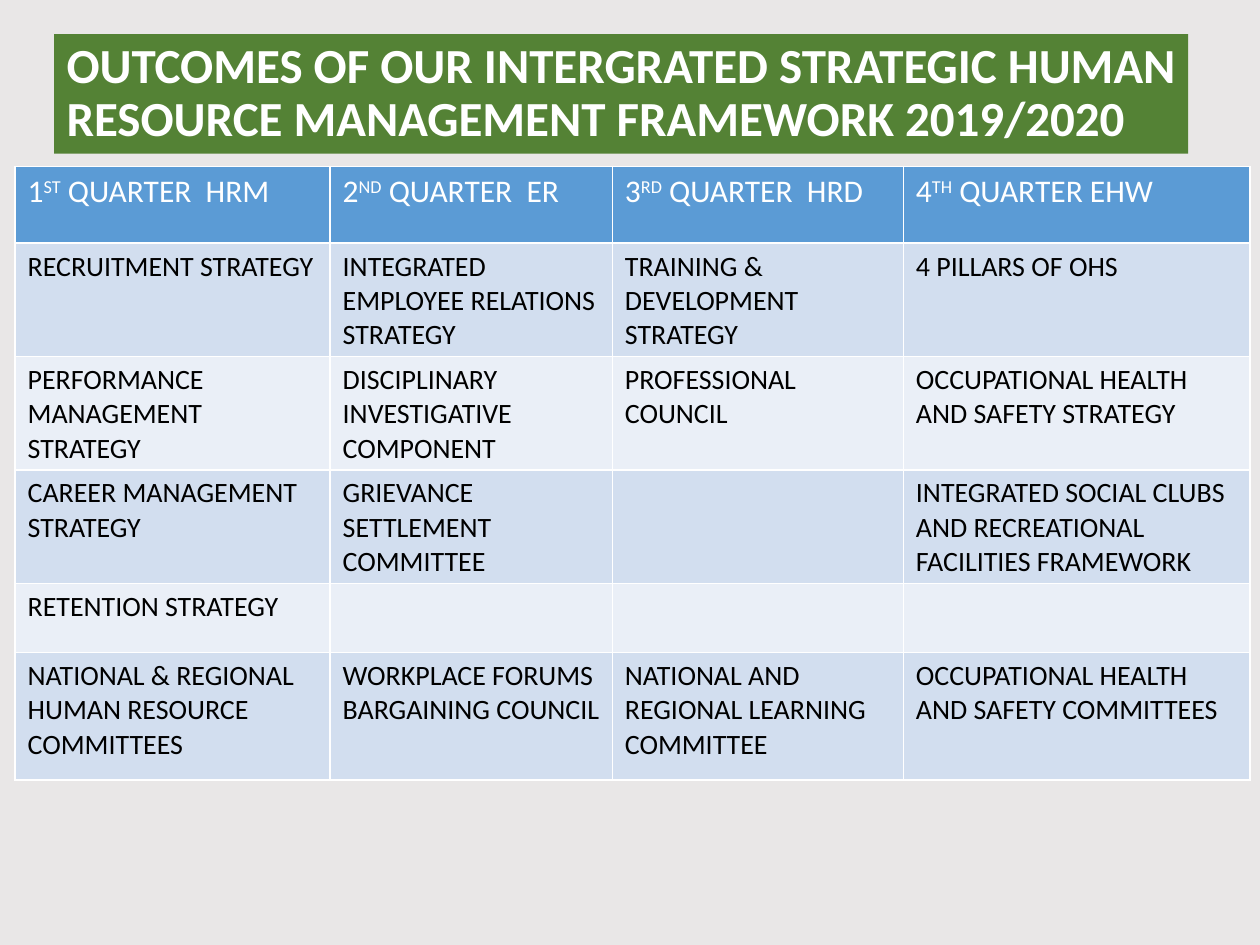
from pptx import Presentation
from pptx.dml.color import RGBColor
from pptx.enum import text
from pptx.util import Inches, Pt

FONT = "Calibri"
WHITE = RGBColor(0xFF, 0xFF, 0xFF)
BLACK = RGBColor(0, 0, 0)
GRAY = RGBColor(0xE9, 0xE7, 0xE7)
GREEN = RGBColor(0x54, 0x82, 0x35)
BLUE = RGBColor(0x5B, 0x9B, 0xD5)
BANDS = (RGBColor(0xD2, 0xDE, 0xEF), RGBColor(0xEA, 0xEF, 0xF7))

TITLE = "OUTCOMES OF OUR INTERGRATED STRATEGIC HUMAN RESOURCE MANAGEMENT FRAMEWORK 2019/2020"
WIDTHS = (2.5, 2.24, 2.31, 2.75)
HEIGHTS = (0.61, 0.84, 0.84, 0.84, 0.55, 1.01)
HEADS = (
    ("1", "ST", " QUARTER  HRM"),
    ("2", "ND", " QUARTER  ER"),
    ("3", "RD", " QUARTER  HRD"),
    ("4", "TH", " QUARTER EHW"),
)
ROWS = (
    ("RECRUITMENT STRATEGY", "INTEGRATED EMPLOYEE RELATIONS STRATEGY",
     "TRAINING & DEVELOPMENT STRATEGY", "4 PILLARS OF OHS"),
    ("PERFORMANCE MANAGEMENT STRATEGY", "DISCIPLINARY INVESTIGATIVE COMPONENT",
     "PROFESSIONAL COUNCIL", "OCCUPATIONAL HEALTH AND SAFETY STRATEGY"),
    ("CAREER MANAGEMENT STRATEGY", "GRIEVANCE SETTLEMENT COMMITTEE",
     "", "INTEGRATED SOCIAL CLUBS AND RECREATIONAL FACILITIES FRAMEWORK"),
    ("RETENTION STRATEGY", "", "", ""),
    ("NATIONAL & REGIONAL HUMAN RESOURCE COMMITTEES",
     "WORKPLACE FORUMS\nBARGAINING COUNCIL",
     "NATIONAL AND REGIONAL LEARNING COMMITTEE",
     "OCCUPATIONAL HEALTH AND SAFETY COMMITTEES"),
)


def paint(item, color):
    item.fill.solid()
    item.fill.fore_color.rgb = color


def style(frame, size, color, bold=False):
    for para in frame.paragraphs:
        for run in para.runs:
            font = run.font
            font.name, font.size, font.bold = FONT, Pt(size), bold
            font.color.rgb = color


def add_title(slide):
    box = slide.shapes.add_textbox(Inches(0.43), Inches(0.27), Inches(9), Inches(0.95))
    paint(box, GREEN)
    frame = box.text_frame
    frame.word_wrap = True
    frame.vertical_anchor = text.MSO_ANCHOR.MIDDLE
    frame.text = TITLE
    frame.paragraphs[0].line_spacing = 0.9
    style(frame, 28, WHITE, True)


def fill_head(cell, parts):
    paint(cell, BLUE)
    para = cell.text_frame.paragraphs[0]
    for part in parts:
        para.add_run().text = part
    para.runs[1].font._element.set("baseline", "30000")
    style(cell.text_frame, 18, WHITE)


def fill_body(cell, words, color):
    paint(cell, color)
    cell.text_frame.text = words
    style(cell.text_frame, 16, BLACK)


def add_grid(slide):
    table = slide.shapes.add_table(
        len(HEIGHTS), len(WIDTHS), Inches(0.12), Inches(1.32),
        Inches(sum(WIDTHS)), Inches(sum(HEIGHTS))).table
    for col, width in zip(table.columns, WIDTHS):
        col.width = Inches(width)
    for row, height in zip(table.rows, HEIGHTS):
        row.height = Inches(height)
    for c, parts in enumerate(HEADS):
        fill_head(table.cell(0, c), parts)
    for r, row in enumerate(ROWS):
        for c, words in enumerate(row):
            fill_body(table.cell(r + 1, c), words, BANDS[r % 2])


def main():
    deck = Presentation()
    deck.slide_width, deck.slide_height = Inches(10), Inches(7.5)
    slide = deck.slides.add_slide(deck.slide_layouts[6])
    paint(slide.background, GRAY)
    add_title(slide)
    add_grid(slide)
    deck.save("out.pptx")


if __name__ == "__main__":
    main()
